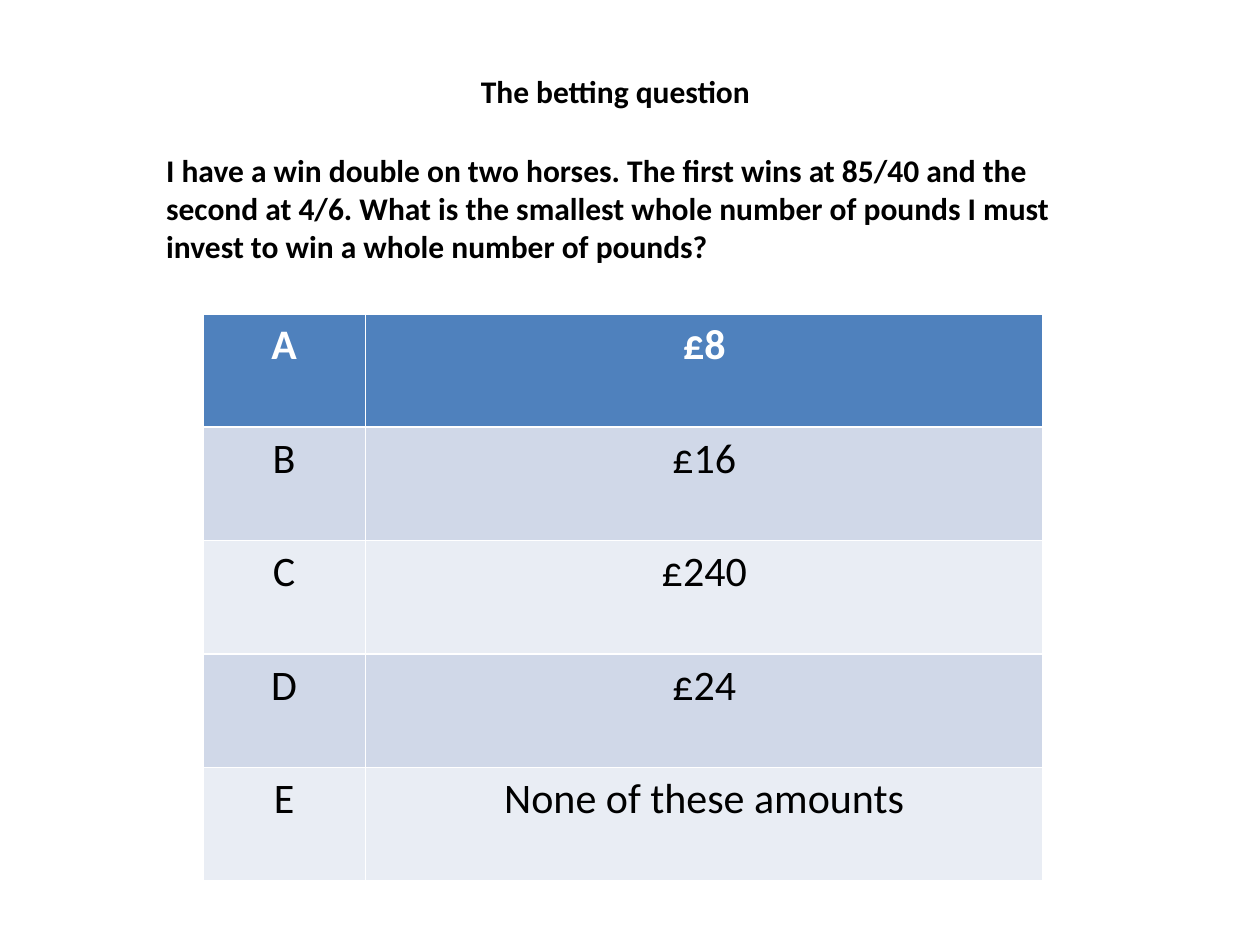
from pptx import Presentation
from pptx.dml.color import RGBColor
from pptx.enum.text import MSO_ANCHOR as ANCHOR, PP_ALIGN as ALIGN
from pptx.util import Inches, Pt


def write(tf, text, size=18, color="000000", bold=True, align=ALIGN.CENTER):
    tf.word_wrap = True
    p = tf.paragraphs[0]
    p.alignment = align
    r = p.add_run()
    r.text = text
    r.font.name = "Calibri"
    r.font.size = Pt(size)
    r.font.bold = bold
    r.font.color.rgb = RGBColor.from_string(color)


prs = Presentation()
prs.slide_width, prs.slide_height = Inches(10), Inches(7.5)
s = prs.slides.add_slide(prs.slide_layouts[5])

title = s.shapes.title
title.left, title.top = Inches(2.56), Inches(0.52)
title.width, title.height = Inches(4.65), Inches(0.4)
title.text_frame.vertical_anchor = ANCHOR.MIDDLE
write(title.text_frame, "The betting question")

question = s.shapes.add_textbox(Inches(1.22), Inches(1.15), Inches(7.72), Inches(1.01))
write(question.text_frame,
      "I have a win double on two horses. The first wins at 85/40 and the second at 4/6. "
      "What is the smallest whole number of pounds I must invest to win a whole number of pounds?",
      align=ALIGN.LEFT)

answers = ["£8", "£16", "£240", "£24", "None of these amounts"]
col_widths = [1.29, 5.38]
row_height = 0.9
table = s.shapes.add_table(len(answers), len(col_widths), Inches(1.61), Inches(2.49),
                           Inches(sum(col_widths)), Inches(row_height * len(answers))).table
for col, width in zip(table.columns, col_widths):
    col.width = Inches(width)

for i, row in enumerate(zip("ABCDE", answers)):
    header = i == 0
    fill = "4F81BD" if header else ("E9EDF4", "D0D8E8")[i % 2]
    for j, text in enumerate(row):
        cell = table.cell(i, j)
        cell.fill.solid()
        cell.fill.fore_color.rgb = RGBColor.from_string(fill)
        write(cell.text_frame, text, size=24, bold=header,
              color="FFFFFF" if header else "000000")

prs.save("out.pptx")
